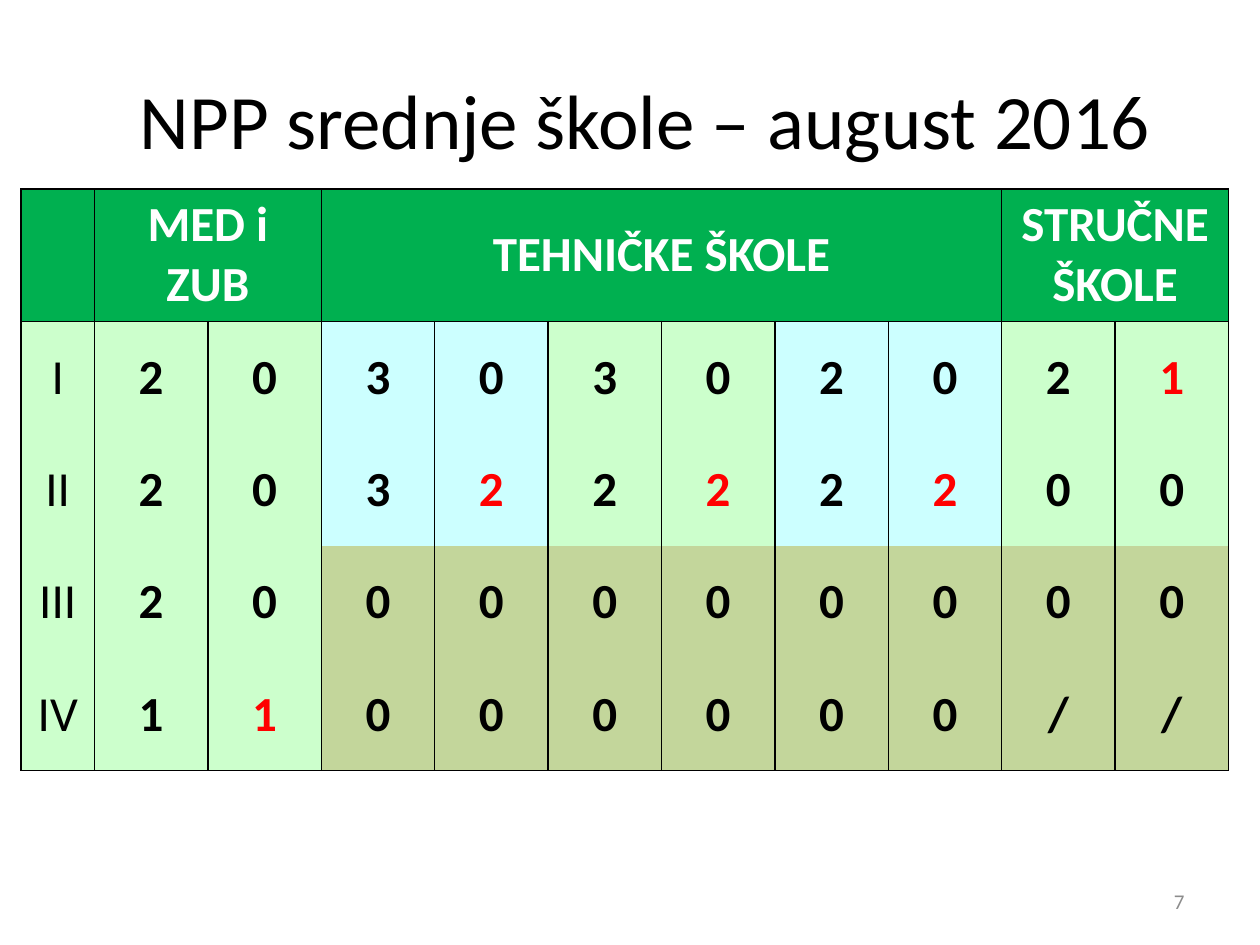
from lxml import etree
from pptx import Presentation
from pptx.dml.color import RGBColor
from pptx.enum import text
from pptx.oxml import ns
from pptx.util import Pt

BLACK = RGBColor(0x00, 0x00, 0x00)
WHITE = RGBColor(0xFF, 0xFF, 0xFF)
RED = RGBColor(0xFF, 0x00, 0x00)
GRAY = RGBColor(0x8C, 0x8C, 0x8C)
HEADER_GREEN = RGBColor(0x00, 0xB0, 0x50)
PALE_GREEN = RGBColor(0xCC, 0xFF, 0xCC)
PALE_BLUE = RGBColor(0xCC, 0xFF, 0xFF)
OLIVE = RGBColor(0xC3, 0xD6, 0x9B)


def format_paragraph(paragraph, size, color, align, bold=False):
    paragraph.alignment = align
    for run in paragraph.runs:
        run.font.name = "Calibri"
        run.font.size = Pt(size)
        run.font.bold = bold
        run.font.color.rgb = color


def set_border(cell, side, visible):
    line = etree.SubElement(cell._tc.get_or_add_tcPr(), ns.qn("a:ln" + side), w=str(Pt(1)))
    if visible:
        fill = etree.SubElement(line, ns.qn("a:solidFill"))
        etree.SubElement(fill, ns.qn("a:srgbClr"), val=str(BLACK))
    else:
        etree.SubElement(line, ns.qn("a:noFill"))


prs = Presentation()
prs.slide_width, prs.slide_height = Pt(720), Pt(540)
slide = prs.slides.add_slide(prs.slide_layouts[5])

title = slide.shapes.title
title.left, title.top, title.width, title.height = Pt(36), Pt(21.6), Pt(666), Pt(92.2)
title.text_frame.text = "NPP srednje škole – august 2016"
title.text_frame.vertical_anchor = text.MSO_ANCHOR.MIDDLE
format_paragraph(title.text_frame.paragraphs[0], 44, BLACK, text.PP_ALIGN.CENTER)

groups = {1: ("MED i ZUB", 2), 3: ("TEHNIČKE ŠKOLE", 6), 9: ("STRUČNE ŠKOLE", 2)}
grades = [
    ["I", "2", "0", "3", "0", "3", "0", "2", "0", "2", "1"],
    ["II", "2", "0", "3", "2", "2", "2", "2", "2", "0", "0"],
    ["III", "2", "0", "0", "0", "0", "0", "0", "0", "0", "0"],
    ["IV", "1", "1", "0", "0", "0", "0", "0", "0", "/", "/"],
]
red_cells = {(1, 10), (2, 4), (2, 6), (2, 8), (4, 2)}
blue_columns = {3, 4, 7, 8}

plan = slide.shapes.add_table(5, 11, Pt(12), Pt(108), Pt(690), Pt(332.4)).table
plan.horz_banding = False
for c, column in enumerate(plan.columns):
    column.width = Pt(42 if c == 0 else 64.8)
for r, row in enumerate(plan.rows):
    row.height = Pt(75.6 if r == 0 else 64.2)

for c, (group, span) in groups.items():
    plan.cell(0, c).merge(plan.cell(0, c + span - 1))
    plan.cell(0, c).text_frame.text = group

for r in range(5):
    for c in range(11):
        cell = plan.cell(r, c)
        if r > 0:
            cell.text_frame.text = grades[r - 1][c]
        cell.vertical_anchor = text.MSO_ANCHOR.MIDDLE
        color = WHITE if r == 0 else RED if (r, c) in red_cells else BLACK
        format_paragraph(cell.text_frame.paragraphs[0], 28, color,
                         text.PP_ALIGN.CENTER, bold=r == 0 or c > 0)
        for side, visible in (("L", True), ("R", True), ("T", r < 2), ("B", r in (0, 4))):
            set_border(cell, side, visible)
        cell.fill.solid()
        if r == 0:
            cell.fill.fore_color.rgb = HEADER_GREEN
        elif r > 2 and c > 2:
            cell.fill.fore_color.rgb = OLIVE
        elif r < 3 and c in blue_columns:
            cell.fill.fore_color.rgb = PALE_BLUE
        else:
            cell.fill.fore_color.rgb = PALE_GREEN

page_number = slide.shapes.add_textbox(Pt(516), Pt(500.5), Pt(168), Pt(28.8)).text_frame
page_number.word_wrap = True
page_number.vertical_anchor = text.MSO_ANCHOR.MIDDLE
page_number.text = "7"
format_paragraph(page_number.paragraphs[0], 12, GRAY, text.PP_ALIGN.RIGHT)

prs.save("out.pptx")
